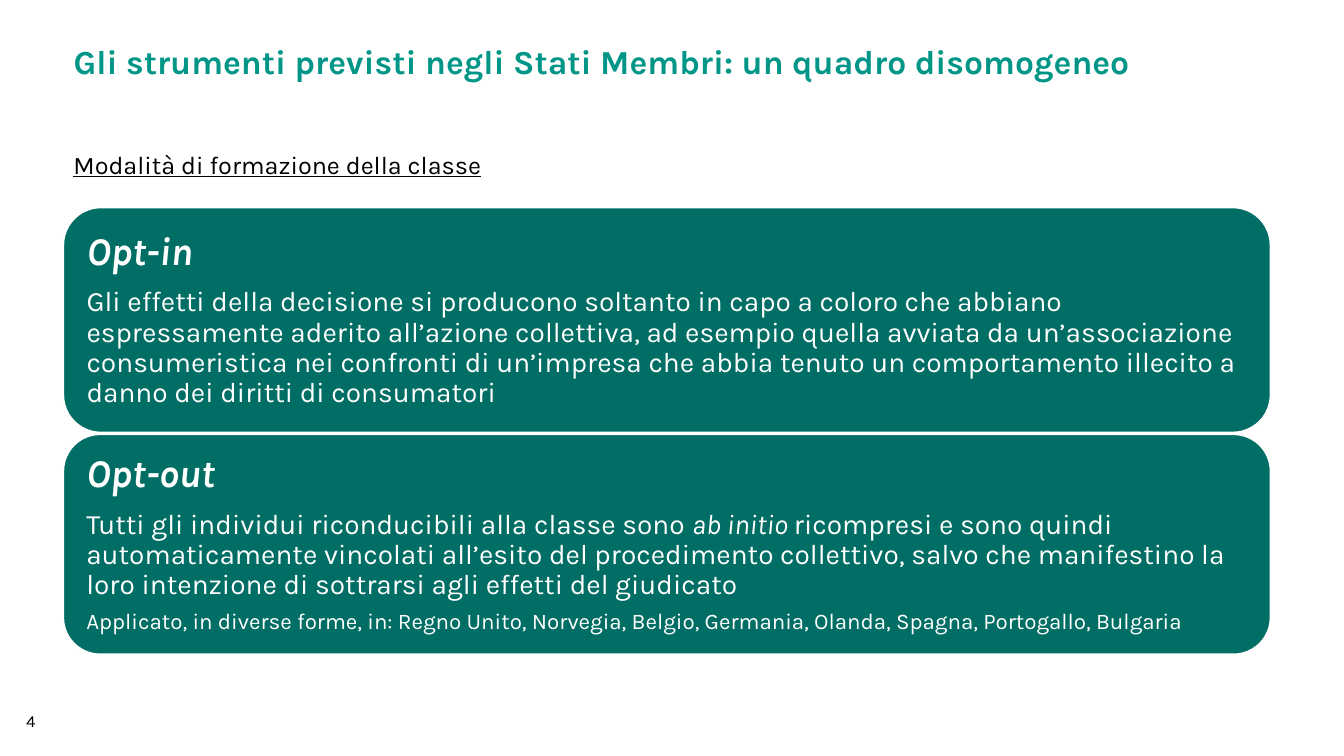
from pptx import Presentation
from pptx.dml.color import RGBColor
from pptx.enum import shapes as sh, text as tx
from pptx.util import Inches, Pt

LEFT, WIDTH = 0.63, 11.97
INK, WHITE, GREEN, TEAL = "010000", "FFFFFF", "006E64", "009687"


def tint(hue):
    return RGBColor.from_string(hue)


def style(para, size, hue, bold=False, italic=False, under=False):
    font = para.font
    font.name, font.size = "Karla", Pt(size)
    font.bold, font.italic, font.underline = bold, italic, under
    font.color.rgb = tint(hue)


def title(slide, words):
    head = slide.shapes.title
    head.left, head.top, head.width, head.height = map(
        Inches, (LEFT, 0.4, WIDTH, 0.91))
    frame = head.text_frame
    frame.word_wrap = True
    frame.auto_size = tx.MSO_AUTO_SIZE.NONE
    frame.vertical_anchor = tx.MSO_ANCHOR.TOP
    para = frame.paragraphs[0]
    para.text = words
    para.alignment = tx.PP_ALIGN.LEFT
    para.line_spacing = 0.9
    style(para, 24, TEAL, bold=True)


def label(slide, words, place, size, under=False):
    frame = slide.shapes.add_textbox(*map(Inches, place)).text_frame
    frame.word_wrap = True
    frame.vertical_anchor = tx.MSO_ANCHOR.MIDDLE
    para = frame.paragraphs[0]
    para.text = words
    style(para, size, INK, under=under)


def card(slide, top, height, name, body, note=None):
    box = slide.shapes.add_shape(
        sh.MSO_SHAPE.ROUNDED_RECTANGLE,
        *map(Inches, (LEFT, top, WIDTH, height)))
    box.shadow.inherit = False
    box.fill.solid()
    box.fill.fore_color.rgb = tint(GREEN)
    box.line.color.rgb = tint(WHITE)
    box.line.width = Pt(1)
    frame = box.text_frame
    frame.word_wrap = True
    frame.vertical_anchor = tx.MSO_ANCHOR.MIDDLE
    frame.margin_left = frame.margin_right = Inches(0.12)
    frame.margin_top = frame.margin_bottom = Inches(0.12)
    rows = [([name], 28, True), (body, 20, False)]
    if note:
        rows.append(([note], 16, False))
    for i, (parts, size, strong) in enumerate(rows):
        para = frame.add_paragraph() if i else frame.paragraphs[0]
        para.alignment = tx.PP_ALIGN.LEFT
        para.line_spacing = 0.9
        para.space_after = Pt(round(size * 0.35))
        style(para, size, WHITE, bold=strong, italic=strong)
        for j, part in enumerate(parts):
            run = para.add_run()
            run.text = part
            if j % 2:
                run.font.italic = True


def main():
    deck = Presentation()
    deck.slide_width, deck.slide_height = Inches(13.33), Inches(7.5)
    slide = deck.slides.add_slide(deck.slide_layouts[5])
    title(slide, "Gli strumenti previsti negli Stati Membri: "
                 "un quadro disomogeneo")
    card(slide, 2.06, 2.23, "Opt-in", [
        "Gli effetti della decisione si producono soltanto in capo a coloro "
        "che abbiano espressamente aderito all’azione collettiva, ad esempio "
        "quella avviata da un’associazione consumeristica nei confronti di "
        "un’impresa che abbia tenuto un comportamento illecito a danno dei "
        "diritti di consumatori"])
    card(slide, 4.31, 2.18, "Opt-out", [
        "Tutti gli individui riconducibili alla classe sono ",
        "ab initio ",
        "ricompresi e sono quindi automaticamente vincolati all’esito del "
        "procedimento collettivo, salvo che manifestino la loro intenzione "
        "di sottrarsi agli effetti del giudicato"],
        "Applicato, in diverse forme, in: Regno Unito, Norvegia, Belgio, "
        "Germania, Olanda, Spagna, Portogallo, Bulgaria")
    label(slide, "4", (0.16, 6.95, 0.47, 0.4), 12)
    label(slide, "Modalità di formazione della classe",
          (LEFT, 1.43, 6.35, 0.4), 18, under=True)
    deck.save("out.pptx")


if __name__ == "__main__":
    main()
